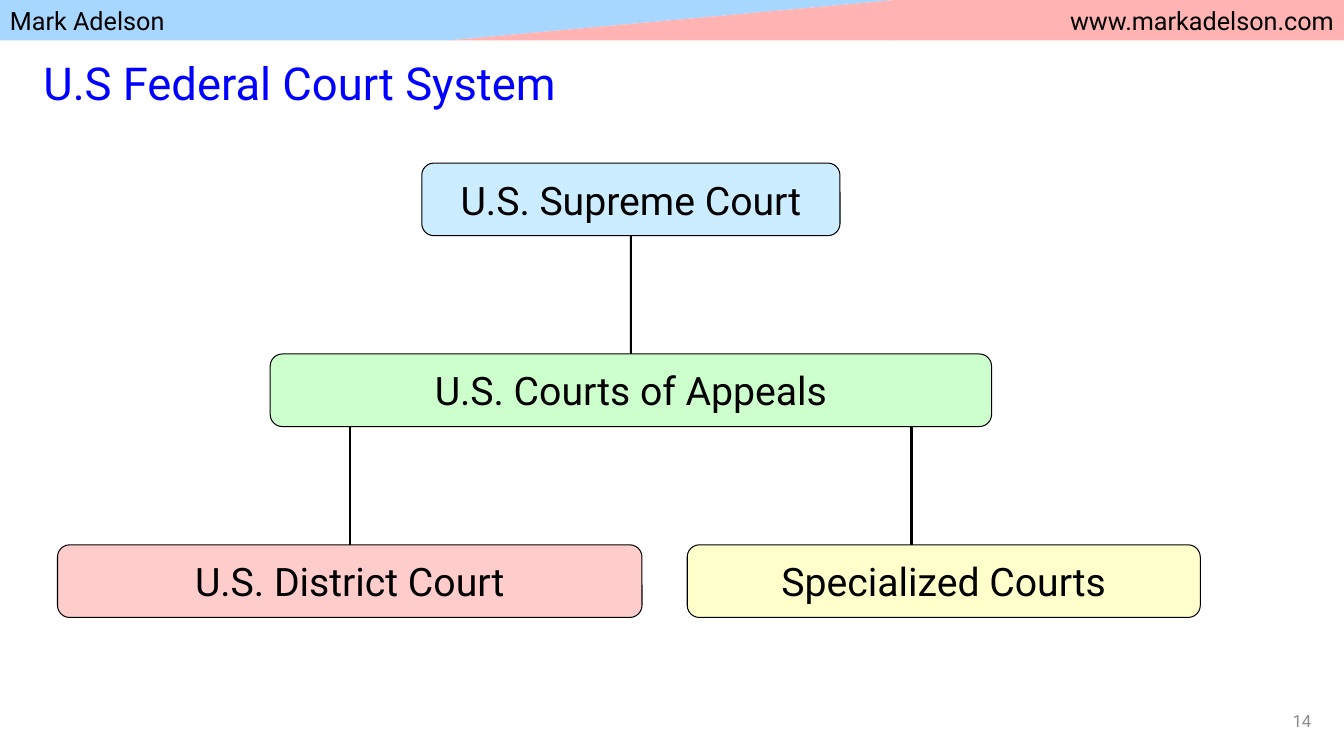
import dataclasses

import pptx
import pptx.dml.color
import pptx.enum.shapes
import pptx.enum.text
import pptx.oxml.ns
import pptx.util
from pptx.util import Cm

Align = pptx.enum.text.PP_ALIGN


@dataclasses.dataclass(frozen=True)
class Theme:
    font: str = "Roboto"
    text: str = "000000"
    title: str = "0000FF"
    page_number: str = "8C8C8C"
    band_blue: str = "A7D6FF"
    band_pink: str = "FFB3B3"
    supreme: str = "CCECFF"
    appeals: str = "CCFFCC"
    district: str = "FFCCCC"
    specialized: str = "FFFFCC"
    title_size: float = 32.4
    court_size: float = 28
    band_size: float = 18
    page_size: float = 12
    outline: float = 0.75
    link: float = 1.5


THEME = Theme()
SLIDE_WIDTH, SLIDE_HEIGHT = 33.87, 19.05
BAND_HEIGHT = 1.02
COURT_HEIGHT = 1.83
ROW_TOP, ROW_STEP = 4.11, 4.81


def color(value):
    return pptx.dml.color.RGBColor.from_string(value)


def write_text(shape, text, size, text_color, alignment):
    frame = shape.text_frame
    frame.word_wrap = True
    frame.auto_size = pptx.enum.text.MSO_AUTO_SIZE.NONE
    frame.vertical_anchor = pptx.enum.text.MSO_ANCHOR.MIDDLE
    paragraph = frame.paragraphs[0]
    paragraph.alignment = alignment
    run = paragraph.add_run()
    run.text = text
    run.font.name = THEME.font
    run.font.size = pptx.util.Pt(size)
    run.font.color.rgb = color(text_color)


def paint(shape, fill, outline=None):
    shape.shadow.inherit = False
    shape.fill.solid()
    shape.fill.fore_color.rgb = color(fill)
    if outline is None:
        shape.line.fill.background()
    else:
        shape.line.color.rgb = color(THEME.text)
        shape.line.width = pptx.util.Pt(outline)


def add_band_panel(slide, left, width, fill, text, alignment):
    panel = slide.shapes.add_shape(
        pptx.enum.shapes.MSO_SHAPE.RECTANGLE, Cm(left), 0, Cm(width), Cm(BAND_HEIGHT))
    paint(panel, fill)
    write_text(panel, text, THEME.band_size, THEME.text, alignment)


def add_wedge(slide, corners, fill):
    points = [(Cm(x), Cm(y)) for x, y in corners]
    builder = slide.shapes.build_freeform(*points[0])
    builder.add_line_segments(points[1:], close=True)
    paint(builder.convert_to_shape(), fill)


def add_header_band(slide):
    third = SLIDE_WIDTH / 3
    add_band_panel(slide, 0, third, THEME.band_blue, "Mark Adelson", Align.LEFT)
    add_band_panel(slide, 2 * third, third, THEME.band_pink,
                   "www.markadelson.com", Align.RIGHT)
    low_left, high_right = (third, BAND_HEIGHT), (2 * third, 0)
    add_wedge(slide, [(third, 0), high_right, low_left], THEME.band_blue)
    add_wedge(slide, [high_right, (2 * third, BAND_HEIGHT), low_left], THEME.band_pink)


def add_title(slide, text):
    title = slide.shapes.title
    title.left, title.top, title.width, title.height = Cm(0.84), Cm(1.27), Cm(32.46), Cm(1.6)
    write_text(title, text, THEME.title_size, THEME.title, Align.LEFT)


def add_page_number(slide, text):
    box = slide.shapes.add_textbox(Cm(25.4), Cm(17.65), Cm(7.9), Cm(1.02))
    write_text(box, text, THEME.page_size, THEME.page_number, Align.RIGHT)


def add_court(slide, row, left, width, fill, name):
    court = slide.shapes.add_shape(
        pptx.enum.shapes.MSO_SHAPE.ROUNDED_RECTANGLE,
        Cm(left), Cm(ROW_TOP + row * ROW_STEP), Cm(width), Cm(COURT_HEIGHT))
    paint(court, fill, THEME.outline)
    write_text(court, name, THEME.court_size, THEME.text, Align.CENTER)
    return court


def add_link(slide, x, upper, lower):
    """Draw a vertical line between two courts at the given position."""
    link = slide.shapes.add_connector(
        pptx.enum.shapes.MSO_CONNECTOR.STRAIGHT, x, upper.top + upper.height, x, lower.top)
    link.line.color.rgb = color(THEME.text)
    link.line.width = pptx.util.Pt(THEME.link)
    properties = link._element.spPr
    properties.append(properties.makeelement(pptx.oxml.ns.qn("a:effectLst"), {}))
    return link


def middle(shape):
    return shape.left + shape.width // 2


def main():
    presentation = pptx.Presentation()
    presentation.slide_width = Cm(SLIDE_WIDTH)
    presentation.slide_height = Cm(SLIDE_HEIGHT)
    slide = presentation.slides.add_slide(presentation.slide_layouts.get_by_name("Title Only"))

    # Header, title and page number
    add_header_band(slide)
    add_title(slide, "U.S Federal Court System")
    add_page_number(slide, "14")

    # Courts, from highest to lowest
    supreme = add_court(slide, 0, 10.63, 10.54, THEME.supreme, "U.S. Supreme Court")
    appeals = add_court(slide, 1, 6.81, 18.18, THEME.appeals, "U.S. Courts of Appeals")
    district = add_court(slide, 2, 1.45, 14.73, THEME.district, "U.S. District Court")
    specialized = add_court(slide, 2, 17.32, 12.93, THEME.specialized, "Specialized Courts")

    # Links between the levels
    supreme_link = add_link(slide, middle(supreme), supreme, appeals)
    supreme_link.begin_connect(supreme, 2)
    supreme_link.end_connect(appeals, 0)
    district_link = add_link(slide, middle(district), appeals, district)
    district_link.end_connect(district, 0)
    add_link(slide, Cm(22.97), appeals, specialized)

    presentation.save("out.pptx")


if __name__ == "__main__":
    main()
